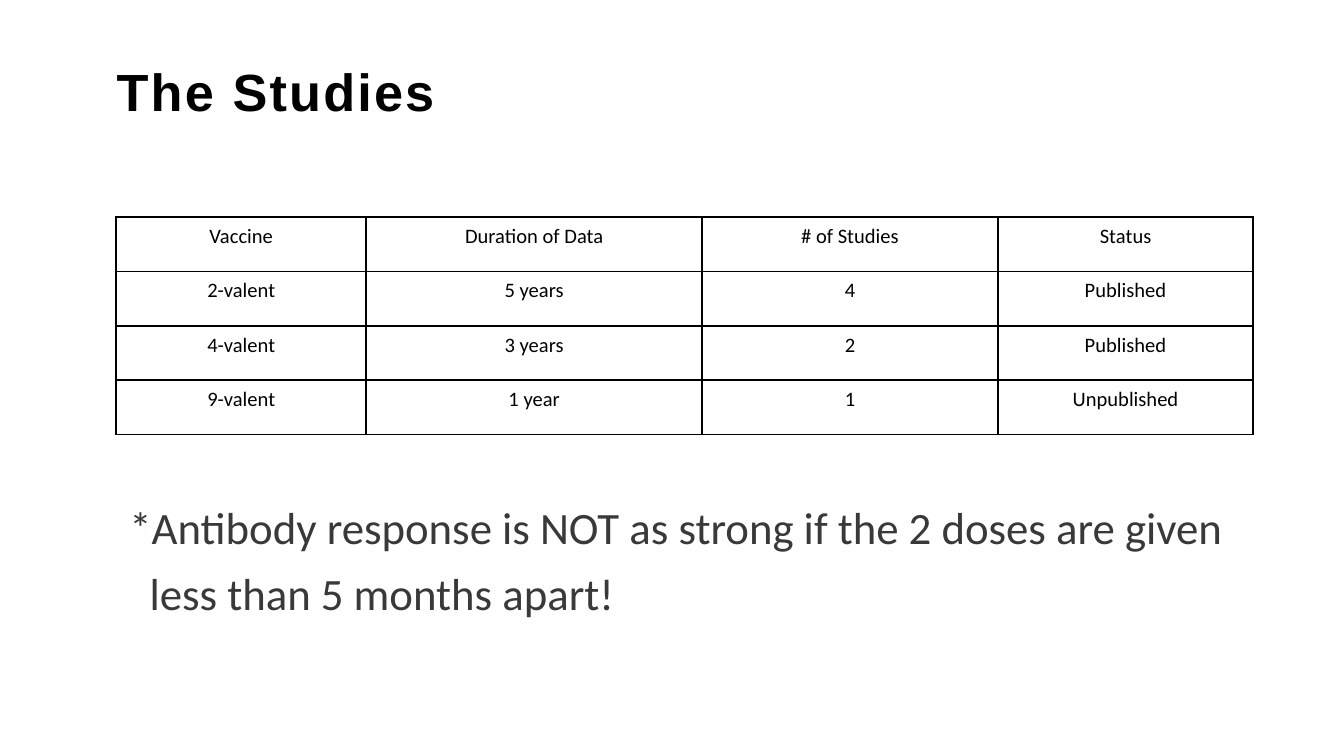
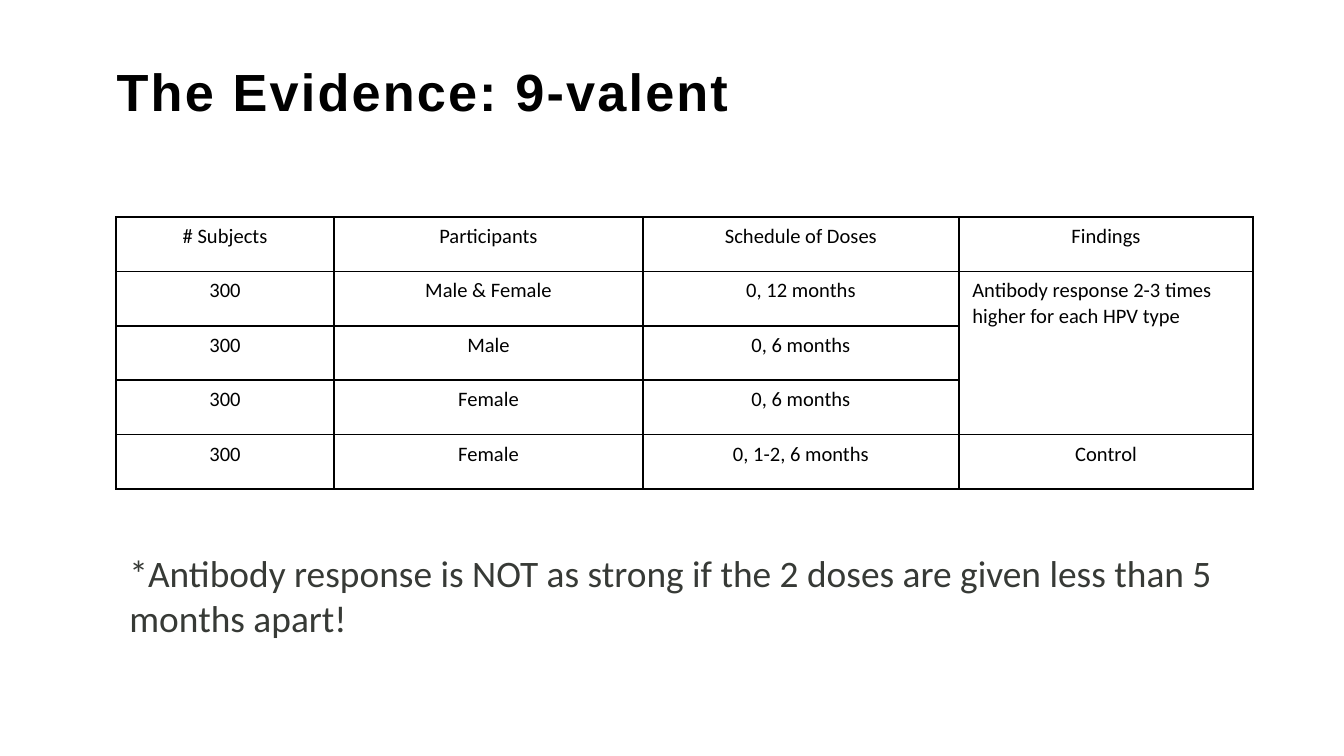
from lxml.etree import SubElement
from pptx import Presentation
from pptx.dml.color import RGBColor
from pptx.enum.text import MSO_ANCHOR as Anchor, MSO_AUTO_SIZE as AutoSize, PP_ALIGN as Align
from pptx.oxml import parse_xml
from pptx.oxml.ns import nsdecls, qn
from pptx.util import Emu, Pt

EMU_PER_PX = 4572  # 200 px to the inch
BLANK_LAYOUT = 6
LEFT, CONTENT_WIDTH = 173, 1692
TABLE_TOP, ROW_HEIGHT = 323, 81


def px(length):
    return Emu(length * EMU_PER_PX)


def colour(hex_code):
    return RGBColor.from_string(hex_code)


class Deck:
    HEAD_FONT, BODY_FONT = "Arial", "Calibri"
    PAPER, INK, NOTE_INK = "FFFFFF", "000000", "373A36"

    def __init__(self, width, height):
        self.prs = Presentation()
        self.prs.slide_width, self.prs.slide_height = px(width), px(height)
        self.slide = None

    def style(self, paragraph, font_name, size, ink, bold=False):
        font = paragraph.font
        font.name, font.size, font.bold = font_name, Pt(size), bold
        font.color.rgb = colour(ink)

    def text_frame(self, left, top, width, height):
        box = self.slide.shapes.add_textbox(*map(px, (left, top, width, height)))
        box.text_frame.word_wrap = True
        return box.text_frame

    def new_slide(self, heading):
        self.slide = self.prs.slides.add_slide(self.prs.slide_layouts[BLANK_LAYOUT])
        background = self.slide.background.fill
        background.solid()
        background.fore_color.rgb = colour(self.PAPER)
        # Title
        frame = self.text_frame(154, 74, 1746, 132)
        frame.vertical_anchor = Anchor.TOP
        frame.margin_top = px(14)
        title = frame.paragraphs[0]
        run = title.add_run()
        run.text = heading
        run._r.get_or_add_rPr().set("spc", "120")
        self.style(title, self.HEAD_FONT, 28, self.INK, bold=True)

    def border(self, cell):
        properties = cell._tc.get_or_add_tcPr()
        for index, side in enumerate(("lnL", "lnR", "lnT", "lnB")):
            line = parse_xml(f'<a:{side} {nsdecls("a")} w="{Pt(1)}"/>')
            fill = SubElement(line, qn("a:solidFill"))
            SubElement(fill, qn("a:srgbClr"), val=self.INK)
            properties.insert(index, line)

    def table(self, rows, column_widths, merge=None, left_aligned=()):
        grid = self.slide.shapes.add_table(
            len(rows), len(column_widths),
            *map(px, (LEFT, TABLE_TOP, CONTENT_WIDTH, ROW_HEIGHT * len(rows)))).table
        grid.first_row = grid.horz_banding = False
        for column, width in zip(grid.columns, column_widths):
            column.width = px(width)
        for r, texts in enumerate(rows):
            grid.rows[r].height = px(ROW_HEIGHT)
            for c, text in enumerate(texts):
                cell = grid.cell(r, c)
                cell.fill.background()
                self.border(cell)
                cell.text = text
                entry = cell.text_frame.paragraphs[0]
                entry.alignment = Align.LEFT if (r, c) in left_aligned else Align.CENTER
                self.style(entry, self.BODY_FONT, 11, self.INK)
        if merge:
            first, last = merge
            grid.cell(*first).merge(grid.cell(*last))

    def note(self, lines, top, height, size, line_pt=None, gap_pt=0, indent=0):
        frame = self.text_frame(LEFT, top, CONTENT_WIDTH, height)
        frame.auto_size = AutoSize.SHAPE_TO_FIT_TEXT
        for number, text in enumerate(lines):
            line = frame.add_paragraph() if number else frame.paragraphs[0]
            line.text = text
            if line_pt:
                line.line_spacing = Pt(line_pt)
            if number and gap_pt:
                line.space_before = Pt(gap_pt)
            if number and indent:
                line._p.get_or_add_pPr().set("marL", str(px(indent)))
            self.style(line, self.BODY_FONT, size, self.NOTE_INK)


def main():
    deck = Deck(2000, 1125)

    # Studies by vaccine
    deck.new_slide("The Studies")
    deck.table([
        ("Vaccine", "Duration of Data", "# of Studies", "Status"),
        ("2-valent", "5 years", "4", "Published"),
        ("4-valent", "3 years", "2", "Published"),
        ("9-valent", "1 year", "1", "Unpublished"),
    ], (372, 500, 440, 380))
    deck.note(("*Antibody response is NOT as strong if the 2 doses are given",
               "less than 5 months apart!"),
              765, 176, 24, line_pt=17.6, gap_pt=17.6, indent=30)

    # Evidence for the 9-valent vaccine
    deck.new_slide("The Evidence: 9-valent")
    deck.table([
        ("# Subjects", "Participants", "Schedule of Doses", "Findings"),
        ("300", "Male & Female", "0, 12 months",
         "Antibody response 2-3 times higher for each HPV type"),
        ("300", "Male", "0, 6 months", ""),
        ("300", "Female", "0, 6 months", ""),
        ("300", "Female", "0, 1-2, 6 months", "Control"),
    ], (324, 460, 470, 438), merge=((1, 3), (3, 3)), left_aligned={(1, 3)})
    deck.note(("*Antibody response is NOT as strong if the 2 doses are given less than 5",
               "months apart!"), 809, 154, 20)

    deck.prs.save("out.pptx")


if __name__ == "__main__":
    main()
